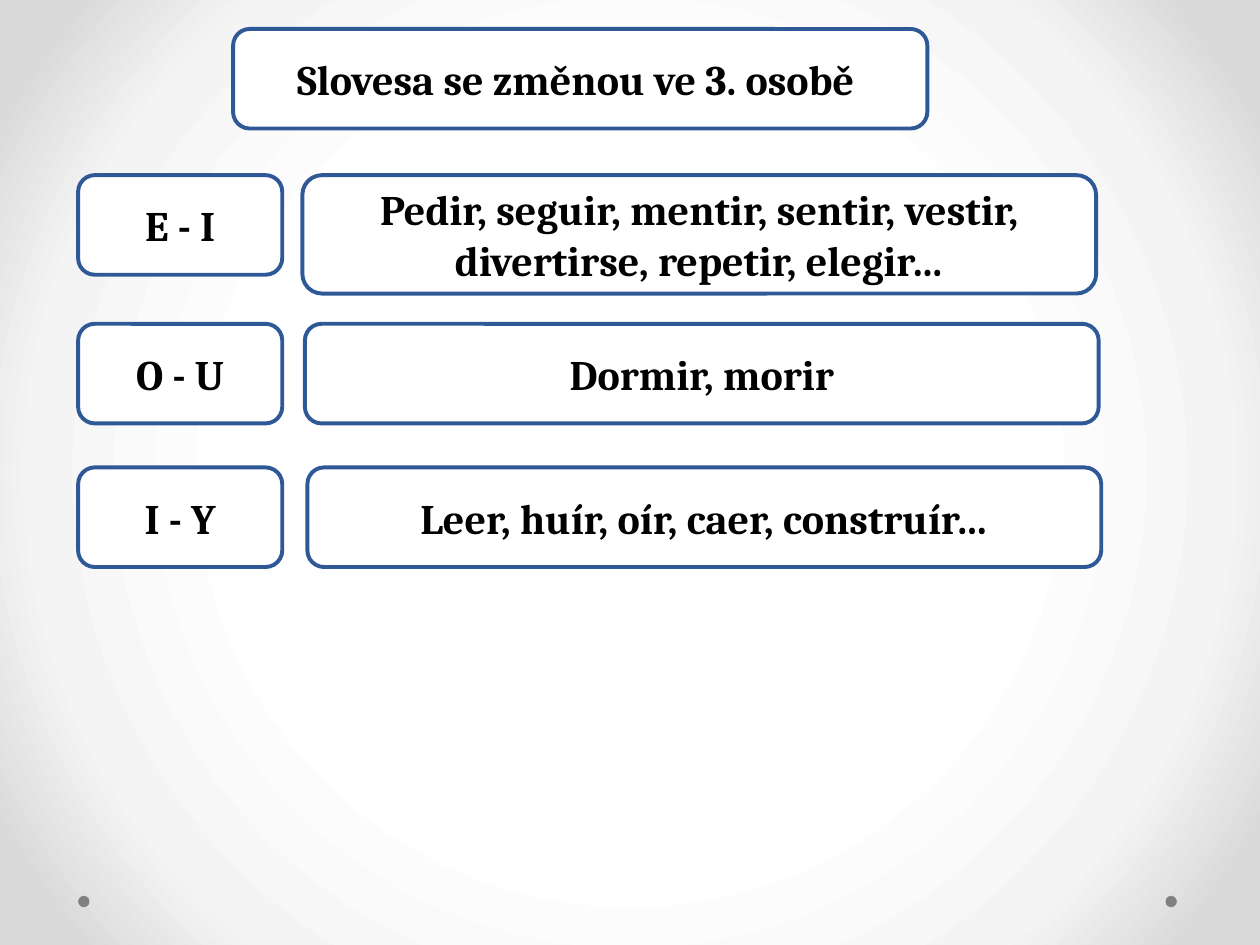
from dataclasses import dataclass

from lxml.etree import SubElement
from pptx import Presentation
from pptx.dml.color import RGBColor
from pptx.enum.shapes import MSO_SHAPE
from pptx.enum.text import MSO_ANCHOR, PP_ALIGN
from pptx.oxml.ns import qn
from pptx.util import Inches, Pt


@dataclass(frozen=True)
class Theme:
    """Colours, font and sizes of the slide."""
    font: str = "Cambria"
    size: int = 24
    line_width: float = 2.25
    text: str = "000000"
    box: str = "FFFFFF"
    border: str = "2F5897"
    dot: str = "808080"
    glow: tuple = ((50, "FFFFFF"), (76, "F4F4F4"), (92, "DADADA"))


THEME = Theme()
TITLE = "Slovesa se změnou ve 3. osobě "
LEFT, BOX_HEIGHT = 0.62, 0.79
CHANGE_WIDTH, VERBS_WIDTH = 1.62, 6.3
DOT_SIZE, DOT_TOP = 0.09, 7.11
ROWS = [
    (1.39, "E - I", 2.4, 0.94,
     "Pedir, seguir, mentir, sentir, vestir, divertirse, repetir, elegir…"),
    (2.57, "O - U", 2.42, BOX_HEIGHT, "Dormir, morir"),
    (3.71, "I - Y", 2.44, BOX_HEIGHT, "Leer, huír, oír, caer, construír…"),
]


def set_background(s):
    """Fill the slide with a circular gradient around its centre."""
    s.background.fill.gradient()
    grad = s.element.find(".//" + qn("a:gradFill"))
    for child in list(grad):
        grad.remove(child)
    stops = SubElement(grad, qn("a:gsLst"))
    for pos, color in THEME.glow:
        stop = SubElement(stops, qn("a:gs"), pos=str(pos * 1000))
        SubElement(stop, qn("a:srgbClr"), val=color)
    circle = SubElement(grad, qn("a:path"))
    circle.set("path", "circle")
    SubElement(circle, qn("a:fillToRect"), l="50000", t="50000", r="50000", b="50000")


def add_filled(s, kind, left, top, width, height, color):
    """Add a flat preset shape without an outline."""
    sp = s.shapes.add_shape(kind, Inches(left), Inches(top), Inches(width), Inches(height))
    sp.shadow.inherit = False
    sp.fill.solid()
    sp.fill.fore_color.rgb = RGBColor.from_string(color)
    sp.line.fill.background()
    return sp


def write(sp, text, *, size=THEME.size, color=THEME.text, bold=True, align=PP_ALIGN.CENTER):
    """Put one formatted paragraph in a shape."""
    tf = sp.text_frame
    tf.word_wrap = True
    tf.vertical_anchor = MSO_ANCHOR.MIDDLE
    p = tf.paragraphs[0]
    p.alignment = align
    r = p.add_run()
    r.text = text
    r.font.name = THEME.font
    r.font.size = Pt(size)
    r.font.bold = bold
    r.font.color.rgb = RGBColor.from_string(color)


def add_box(s, text, left, top, width, height=BOX_HEIGHT):
    """Add a bordered rounded box with text."""
    sp = add_filled(s, MSO_SHAPE.ROUNDED_RECTANGLE, left, top, width, height, THEME.box)
    sp.line.color.rgb = RGBColor.from_string(THEME.border)
    sp.line.width = Pt(THEME.line_width)
    write(sp, text)


def main():
    """Build and save the slide."""
    prs = Presentation()
    prs.slide_width, prs.slide_height = Inches(10), Inches(7.5)
    s = prs.slides.add_slide(prs.slide_layouts[6])
    set_background(s)
    for left in (9.25, LEFT):
        add_filled(s, MSO_SHAPE.OVAL, left, DOT_TOP, DOT_SIZE, DOT_SIZE, THEME.dot)
    add_box(s, TITLE, 1.85, 0.23, 5.51)
    for top, change, verbs_left, verbs_height, verbs in ROWS:
        add_box(s, change, LEFT, top, CHANGE_WIDTH)
        add_box(s, verbs, verbs_left, top, VERBS_WIDTH, verbs_height)
    prs.save("out.pptx")


if __name__ == "__main__":
    main()
